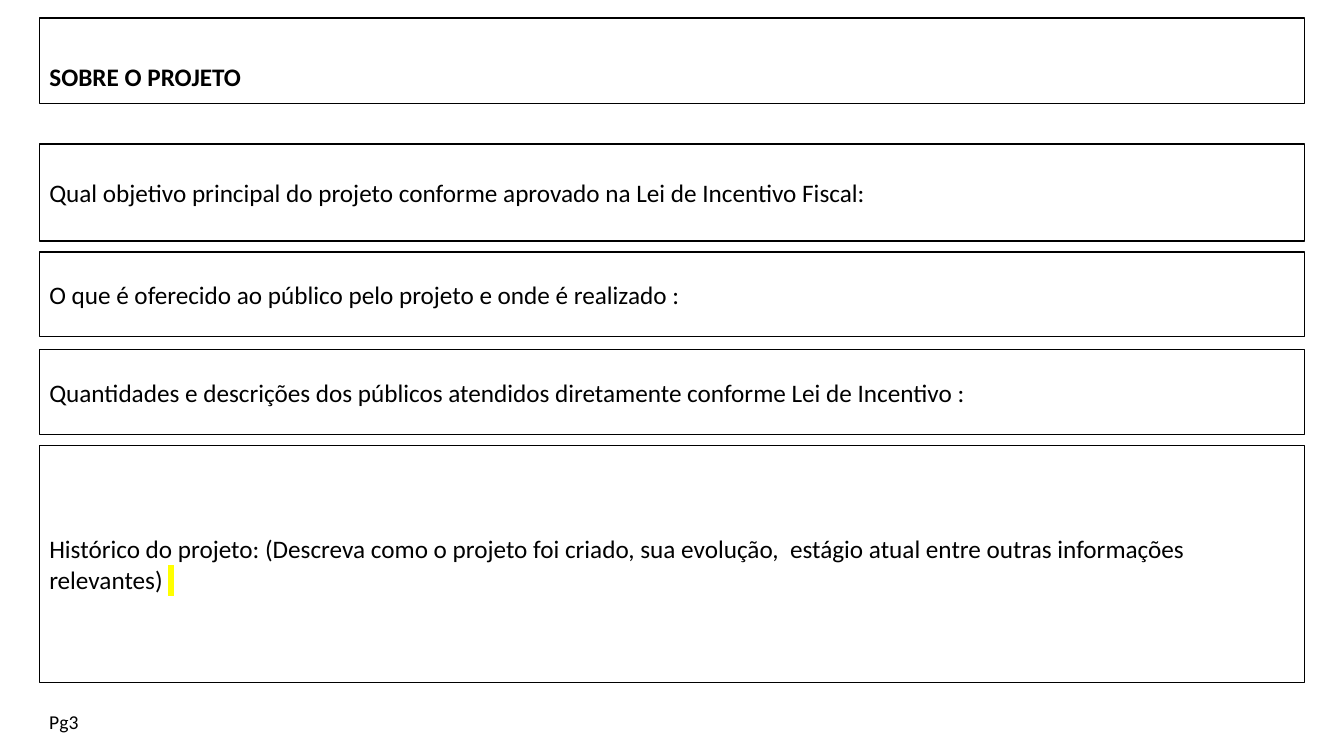
from dataclasses import dataclass
from typing import Any

import pptx
import pptx.dml.color
import pptx.enum.shapes
import pptx.enum.text
import pptx.oxml
import pptx.oxml.ns
import pptx.util
from pptx.util import Inches

BLACK = pptx.dml.color.RGBColor(0x00, 0x00, 0x00)
YELLOW = pptx.dml.color.RGBColor(0xFF, 0xFF, 0x00)
ANCHOR = pptx.enum.text.MSO_ANCHOR
ALIGN = pptx.enum.text.PP_ALIGN
AUTO_SIZE = pptx.enum.text.MSO_AUTO_SIZE

LEFT = Inches(0.39)
WIDTH = Inches(12.55)
BODY_FONT = {"name": "Calibri", "size": pptx.util.Pt(18), "bold": False}
HEADING_FONT = BODY_FONT | {"bold": True}
PAGE_FONT = BODY_FONT | {"size": pptx.util.Pt(14)}
QUESTION_FRAME = {"word_wrap": True, "vertical_anchor": ANCHOR.MIDDLE}
HEADING_FRAME = {
    "word_wrap": True,
    "auto_size": AUTO_SIZE.NONE,
    "vertical_anchor": ANCHOR.BOTTOM,
    "margin_bottom": Inches(0.12),
}
PAGE_FRAME = {"word_wrap": False, "auto_size": AUTO_SIZE.SHAPE_TO_FIT_TEXT}


@dataclass(frozen=True)
class Question:
    text: str
    top: float
    height: float
    align: Any = ALIGN.LEFT
    highlighted_end: str = ""


QUESTIONS = (
    Question(
        "Qual objetivo principal do projeto conforme aprovado na Lei de Incentivo Fiscal:",
        1.43, 0.96, align=ALIGN.JUSTIFY,
    ),
    Question("O que é oferecido ao público pelo projeto e onde é realizado :", 2.5, 0.84),
    Question(
        "Quantidades e descrições dos públicos atendidos diretamente conforme Lei de Incentivo :",
        3.47, 0.84,
    ),
    Question(
        "Histórico do projeto: (Descreva como o projeto foi criado, sua evolução,  "
        "estágio atual entre outras informações relevantes) ",
        4.42, 2.35, highlighted_end=" ",
    ),
)


def apply_format(target: Any, values: dict[str, Any]) -> None:
    for attribute, value in values.items():
        setattr(target, attribute, value)


def add_run(paragraph: Any, text: str, font: dict[str, Any]) -> Any:
    run = paragraph.add_run()
    run.text = text
    apply_format(run.font, font)
    run.font.color.rgb = BLACK
    return run


def highlight(run: Any, color: pptx.dml.color.RGBColor) -> None:
    namespace = pptx.oxml.ns.nsdecls("a")
    mark = pptx.oxml.parse_xml(
        f'<a:highlight {namespace}><a:srgbClr val="{color}"/></a:highlight>'
    )
    run.font.fill
    run_format = run.font._element
    run_format.find(pptx.oxml.ns.qn("a:solidFill")).addnext(mark)


def outline(box: Any) -> None:
    box.fill.background()
    box.line.color.rgb = BLACK
    box.line.width = pptx.util.Pt(1)


def format_heading(heading: Any) -> None:
    apply_format(heading, {
        "left": LEFT, "top": Inches(0.18), "width": WIDTH, "height": Inches(0.85),
    })
    outline(heading)
    apply_format(heading.text_frame, HEADING_FRAME)
    paragraph = heading.text_frame.paragraphs[0]
    paragraph.alignment = ALIGN.LEFT
    add_run(paragraph, "SOBRE O PROJETO", HEADING_FONT)


def add_question(slide: Any, question: Question) -> None:
    box = slide.shapes.add_shape(
        pptx.enum.shapes.MSO_SHAPE.RECTANGLE,
        LEFT, Inches(question.top), WIDTH, Inches(question.height),
    )
    box.shadow.inherit = False
    outline(box)
    apply_format(box.text_frame, QUESTION_FRAME)
    paragraph = box.text_frame.paragraphs[0]
    paragraph.alignment = question.align
    add_run(paragraph, question.text, BODY_FONT)
    if question.highlighted_end:
        highlight(add_run(paragraph, question.highlighted_end, BODY_FONT), YELLOW)


def add_page_label(slide: Any) -> None:
    page_label = slide.shapes.add_textbox(LEFT, Inches(6.99), Inches(0.5), Inches(0.34))
    apply_format(page_label.text_frame, PAGE_FRAME)
    add_run(page_label.text_frame.paragraphs[0], "Pg3", PAGE_FONT)


def main() -> None:
    presentation = pptx.Presentation()
    apply_format(presentation, {"slide_width": Inches(13.33), "slide_height": Inches(7.5)})
    slide = presentation.slides.add_slide(presentation.slide_layouts[5])
    format_heading(slide.shapes.title)
    for question in QUESTIONS:
        add_question(slide, question)
    add_page_label(slide)
    presentation.save("out.pptx")


if __name__ == "__main__":
    main()
